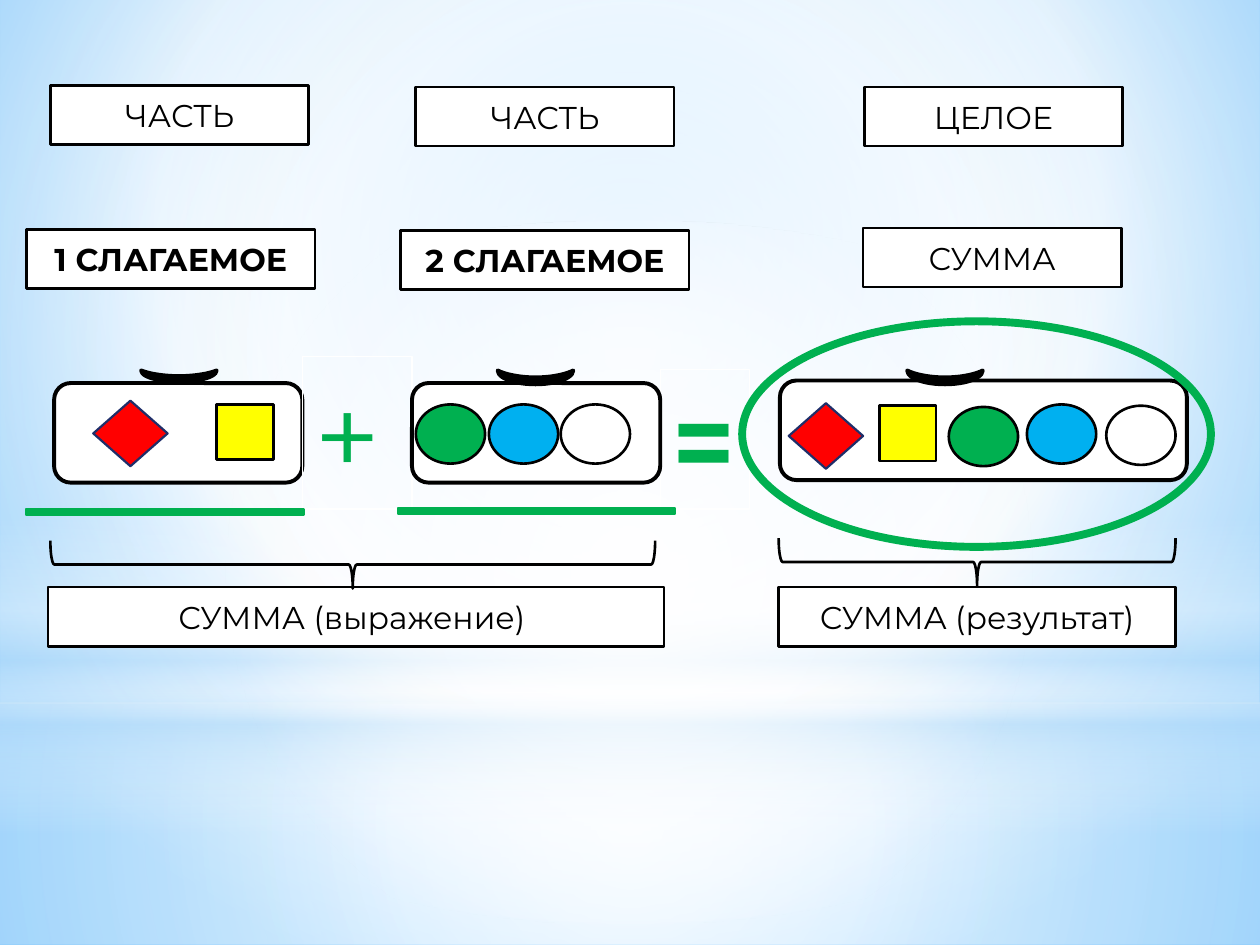
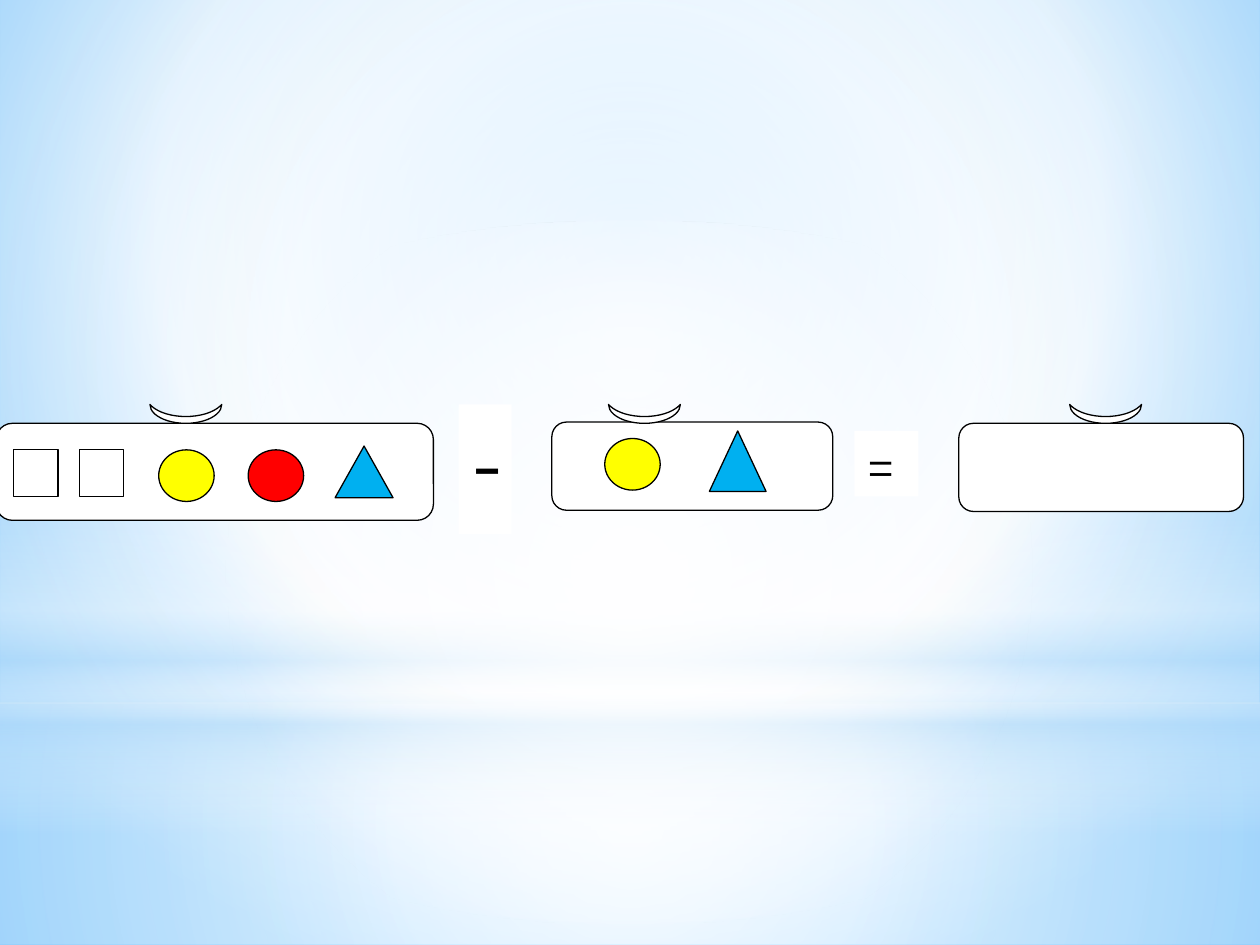
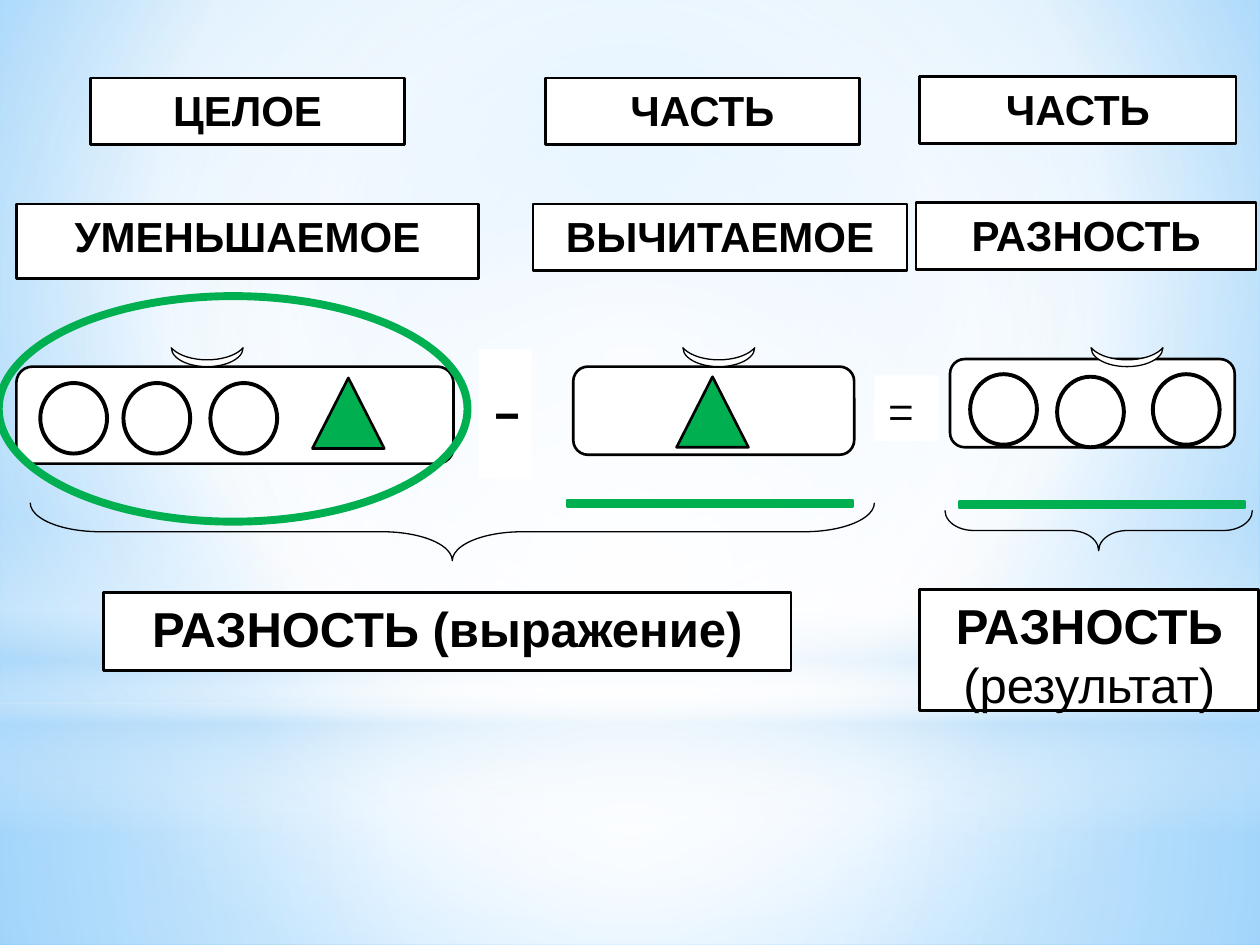
from lxml.etree import SubElement
from pptx import Presentation
from pptx.dml.color import RGBColor
from pptx.enum.shapes import MSO_SHAPE
from pptx.enum.text import MSO_ANCHOR, PP_ALIGN
from pptx.oxml import parse_xml
from pptx.oxml.ns import nsdecls, qn
from pptx.util import Inches, Pt

# Colours
BLACK = RGBColor(0x00, 0x00, 0x00)
WHITE = RGBColor(0xFF, 0xFF, 0xFF)
GREEN = RGBColor(0x00, 0xB0, 0x50)
BLUE = RGBColor(0x00, 0xB0, 0xF0)
RED = RGBColor(0xFF, 0x00, 0x00)
YELLOW = RGBColor(0xFF, 0xFF, 0x00)
NAVY = RGBColor(0x1F, 0x2E, 0x69)
SKY = RGBColor(0x9E, 0xD5, 0xFF)
DEEP_SKY = RGBColor(0x5B, 0xB9, 0xFF)
PALE_SKY = RGBColor(0xB4, 0xDC, 0xFA)

# Grid: 100 columns by 75 rows; every box is (left, top, width, height) in cells
SLIDE_WIDTH, SLIDE_HEIGHT = Inches(10), Inches(7.5)
COLUMN, ROW = SLIDE_WIDTH / 100, SLIDE_HEIGHT / 75

CENTRE = (50, 50, 50, 50)

# Bands on the master: preset, box, stops (position, colour, opacity), focus
BANDS = [
    (MSO_SHAPE.RECTANGLE, (0, 55.8, 100, 19.2),
     [(0, WHITE, 91), (37, WHITE, 76), (100, PALE_SKY, 79)], CENTRE),
    (MSO_SHAPE.RECTANGLE, (0, 0, 100, 55.8),
     [(0, WHITE, 89), (48, WHITE, 62), (100, PALE_SKY, 79)], CENTRE),
    (MSO_SHAPE.RECTANGLE, (0, 41.2, 100, 25),
     [(0, WHITE, 0), (29, WHITE, 30), (45, PALE_SKY, 40),
      (55, WHITE, 26), (65, PALE_SKY, 60), (100, WHITE, 0)], None),
    (MSO_SHAPE.OVAL, (0, 17.5, 100, 55.8),
     [(0, WHITE, 100), (56, WHITE, 0)], CENTRE),
]


# Basic elements
def add_figure(slide, preset, box, fill=None, line=BLACK, weight=1.5,
               rotation=0, adjustments=()):
    left, top, width, height = box
    shape = slide.shapes.add_shape(
        preset, round(left * COLUMN), round(top * ROW),
        round(width * COLUMN), round(height * ROW))
    shape.shadow.inherit = False
    shape.rotation = rotation
    for index, value in enumerate(adjustments):
        shape.adjustments[index] = value
    if fill is None:
        shape.fill.background()
    else:
        shape.fill.solid()
        shape.fill.fore_color.rgb = fill
    if line is None:
        shape.line.fill.background()
    else:
        shape.line.color.rgb = line
        shape.line.width = Pt(weight)
    return shape


def write(shape, lines, font, size, color=BLACK, align=PP_ALIGN.CENTER,
          anchor=MSO_ANCHOR.MIDDLE):
    """Fill a shape with (text, bold) lines."""
    frame = shape.text_frame
    frame.word_wrap = True
    frame.vertical_anchor = anchor
    for index, (text, bold) in enumerate(lines):
        paragraph = frame.add_paragraph() if index else frame.paragraphs[0]
        paragraph.text = text
        paragraph.alignment = align
        paragraph.font.name = font
        paragraph.font.size = Pt(size)
        paragraph.font.bold = bold
        paragraph.font.color.rgb = color


def add_turned(slide, preset, box, **style):
    """Place a shape turned a quarter left so that it covers the given box."""
    left, top, width, height = box
    frame = (left + (width - height) / 2, top + (height - width) / 2,
             height, width)
    return add_figure(slide, preset, frame, rotation=270, **style)


# Shared background
def apply_gradient(properties, stops, focus):
    gradient = parse_xml(f'<a:gradFill {nsdecls("a")} rotWithShape="1"/>')
    stop_list = SubElement(gradient, qn("a:gsLst"))
    for position, color, opacity in stops:
        stop = SubElement(stop_list, qn("a:gs"), pos=str(position * 1000))
        stop_color = SubElement(stop, qn("a:srgbClr"), val=str(color))
        if opacity < 100:
            SubElement(stop_color, qn("a:alpha"), val=str(opacity * 1000))
    if focus:
        spread = SubElement(gradient, qn("a:path"), path="circle")
        sides = {side: str(share * 1000) for side, share in zip("ltrb", focus)}
        SubElement(spread, qn("a:fillToRect"), **sides)
    else:
        SubElement(gradient, qn("a:lin"), ang="5400000", scaled="0")
    properties.replace(properties.find(qn("a:solidFill")), gradient)


def dress_master(master, slide):
    """Draw the bands on a slide and move them to the master."""
    master.background.fill.solid()
    apply_gradient(master.element.find(".//" + qn("p:bgPr")),
                   [(0, SKY, 100), (60, WHITE, 100), (100, DEEP_SKY, 100)],
                   (20, 10, 20, 60))
    for number, (preset, box, stops, focus) in enumerate(BANDS):
        band = add_figure(slide, preset, box, WHITE, line=None)
        apply_gradient(band.element.spPr, stops, focus)
        band.element.nvSpPr.cNvPr.set("id", str(101 + number))
        master.shapes.element.append(band.element)


# Parts of the equations
def add_bag(slide, box, weight):
    add_figure(slide, MSO_SHAPE.ROUNDED_RECTANGLE, box, WHITE, weight=weight)


def add_sign(slide, text, box, size, color=BLACK, bold=False, fill=None,
             line=None):
    sign = add_figure(slide, MSO_SHAPE.RECTANGLE, box, fill, line, 0.75)
    write(sign, [(text, bold)], "Montserrat", size, color, PP_ALIGN.LEFT,
          MSO_ANCHOR.TOP)


def add_label(slide, box, lines, font, size, anchor):
    label = add_figure(slide, MSO_SHAPE.RECTANGLE, box, WHITE)
    write(label, lines, font, size, anchor=anchor)


def add_brace(slide, box, weight, adjustments=()):
    add_turned(slide, MSO_SHAPE.LEFT_BRACE, box, weight=weight,
               adjustments=adjustments)


def add_underline(slide, left, top, width):
    add_figure(slide, MSO_SHAPE.RECTANGLE, (left, top, width, 0.5), GREEN,
               GREEN, 1.25)


def add_ring(slide, left, top):
    add_figure(slide, MSO_SHAPE.OVAL, (left, top, 37.2, 17.9), None, GREEN, 4.5)


def add_tokens(slide, preset, size, places, line=BLACK, weight=1.5):
    """Place equal tokens at (left, top, fill)."""
    for left, top, fill in places:
        add_figure(slide, preset, (left, top, *size), fill, line, weight)


def add_subtraction(slide, bags, weight, signs_left, signs_top, handle_lefts,
                    handle_top):
    for box in bags:
        add_bag(slide, box, weight)
    add_sign(slide, "-", (signs_left, signs_top, 4.2, 10.3), 48, fill=WHITE)
    add_sign(slide, "=", (signs_left + 31.4, signs_top + 2.1, 5.1, 5.2), 28,
             fill=WHITE)
    for left in handle_lefts:
        add_turned(slide, MSO_SHAPE.MOON, (left, handle_top, 5.7, 1.5),
                   fill=WHITE, weight=0.75, adjustments=[0.36])


# Slides
def build_sum(slide):
    add_bag(slide, (4.3, 30.4, 19.7, 7.9), 2.25)
    add_sign(slide, "+", (24, 28.3, 8.7, 12.1), 66, GREEN, line=WHITE)
    add_sign(slide, "=", (52.4, 29.3, 7.1, 11.1), 60, GREEN, True, line=WHITE)
    add_bag(slide, (61.9, 30.2, 32.3, 7.9), 2.25)
    add_bag(slide, (32.7, 30.4, 19.7, 7.9), 2.25)
    for left, height in [(11.2, 0.9), (39.5, 1.1), (72, 1.1)]:
        add_turned(slide, MSO_SHAPE.MOON, (left, 29.4, 6, height),
                   fill=BLACK, weight=2.25)

    # Names of the parts and the whole
    for left, top, width, text, bold in [
            (4, 6.8, 20.5, "ЧАСТЬ", False),
            (33, 6.9, 20.5, "ЧАСТЬ", False),
            (68.6, 6.9, 20.5, "ЦЕЛОЕ", False),
            (2.1, 18.2, 22.9, "1 СЛАГАЕМОЕ", True),
            (31.8, 18.3, 22.9, "2 СЛАГАЕМОЕ", True),
            (68.5, 18.1, 20.5, "СУММА", False),
            (3.8, 46.6, 48.9, "СУММА (выражение) ", False),
            (61.8, 46.6, 31.5, "СУММА (результат)", False)]:
        add_label(slide, (left, top, width, 4.7), [(text, bold)],
                  "Montserrat", 18, MSO_ANCHOR.MIDDLE)
    add_brace(slide, (4, 42.9, 48, 3.8), 1.5)
    add_brace(slide, (61.8, 42.7, 31.5, 3.8), 1.5)

    # Contents of the bags
    add_tokens(slide, MSO_SHAPE.DIAMOND, (5.9, 5.2),
               [(7.4, 31.8, RED), (62.6, 32, RED)], NAVY, 1.25)
    add_tokens(slide, MSO_SHAPE.RECTANGLE, (4.5, 4.4),
               [(17.2, 32.1, YELLOW), (69.8, 32.2, YELLOW)])
    add_tokens(slide, MSO_SHAPE.OVAL, (5.5, 4.7),
               [(33, 32.1, GREEN), (38.8, 32.1, BLUE), (44.5, 32.1, WHITE),
                (75.3, 32.3, GREEN), (81.5, 32.1, BLUE), (87.8, 32.2, WHITE)])
    add_underline(slide, 2.1, 40.4, 22)
    add_underline(slide, 31.6, 40.3, 22)
    add_ring(slide, 58.9, 25.5)


def build_exercise(slide):
    add_subtraction(
        slide,
        [(76.1, 33.6, 22.6, 7), (-0.3, 33.6, 34.7, 7.7), (43.8, 33.5, 22.3, 7)],
        0.75, 36.4, 32.1, [11.9, 48.3, 84.9], 32.1)
    add_tokens(slide, MSO_SHAPE.RECTANGLE, (3.5, 3.7),
               [(1.1, 35.7, WHITE), (6.3, 35.7, WHITE)], weight=0.75)
    add_tokens(slide, MSO_SHAPE.OVAL, (4.4, 4.1),
               [(12.6, 35.7, YELLOW), (19.7, 35.7, RED), (48, 34.8, YELLOW)],
               weight=0.75)
    for box in [(26.6, 35.4, 4.6, 4.1), (56.3, 34.2, 4.5, 4.8)]:
        add_figure(slide, MSO_SHAPE.ISOSCELES_TRIANGLE, box, BLUE, weight=0.75)


def build_difference(slide):
    add_subtraction(
        slide,
        [(75.4, 28.5, 22.6, 7), (1.3, 29.1, 34.7, 7.7), (45.5, 29.1, 22.3, 7)],
        1.5, 38, 27.7, [13.6, 54.2, 86.6], 27.6)

    # Names of the whole and the parts
    for box, size, lines in [
            ((7.2, 6.2, 24.9, 5.3), 24, [("ЦЕЛОЕ", True)]),
            ((43.3, 6.2, 24.9, 5.3), 24, [("ЧАСТЬ", True)]),
            ((73, 6.1, 25.1, 5.3), 24, [("ЧАСТЬ", True)]),
            ((1.3, 16.2, 36.7, 5.9), 24, [("УМЕНЬШАЕМОЕ", True)]),
            ((42.3, 16.2, 29.7, 5.3), 24, [("ВЫЧИТАЕМОЕ", True)]),
            ((72.7, 16.1, 27, 5.3), 24, [("РАЗНОСТЬ", True)]),
            ((8.2, 47, 54.6, 6.2), 28, [("РАЗНОСТЬ (выражение)", True)]),
            ((73, 46.8, 26.9, 9.6), 28,
             [("РАЗНОСТЬ", True), ("(результат)", False)])]:
        add_label(slide, box, lines, "Arial", size, MSO_ANCHOR.TOP)
    add_brace(slide, (2.4, 39.9, 67, 4.6), 0.75, [1.21, 0.5])
    add_brace(slide, (75, 40.5, 24.4, 3.2), 0.75, [0.71, 0.5])

    # Contents of the bags
    add_tokens(slide, MSO_SHAPE.OVAL, (5.3, 5.6),
               [(3.2, 30.4, WHITE), (9.8, 30.4, WHITE), (16.7, 30.4, WHITE),
                (77, 29.7, WHITE), (83.9, 29.9, WHITE), (91.5, 29.7, WHITE)],
               weight=2.25)
    add_tokens(slide, MSO_SHAPE.ISOSCELES_TRIANGLE, (5.7, 5.6),
               [(24.8, 30, GREEN), (53.7, 29.9, GREEN)])
    add_underline(slide, 45, 39.7, 22.7)
    add_underline(slide, 76.1, 39.8, 22.7)
    add_ring(slide, -0.1, 23.5)


def main():
    presentation = Presentation()
    presentation.slide_width, presentation.slide_height = SLIDE_WIDTH, SLIDE_HEIGHT
    blank = presentation.slide_layouts[6]
    slides = [presentation.slides.add_slide(blank) for _ in range(3)]
    dress_master(presentation.slide_master, slides[0])
    for build, slide in zip((build_sum, build_exercise, build_difference), slides):
        build(slide)
    presentation.save("out.pptx")


if __name__ == "__main__":
    main()
